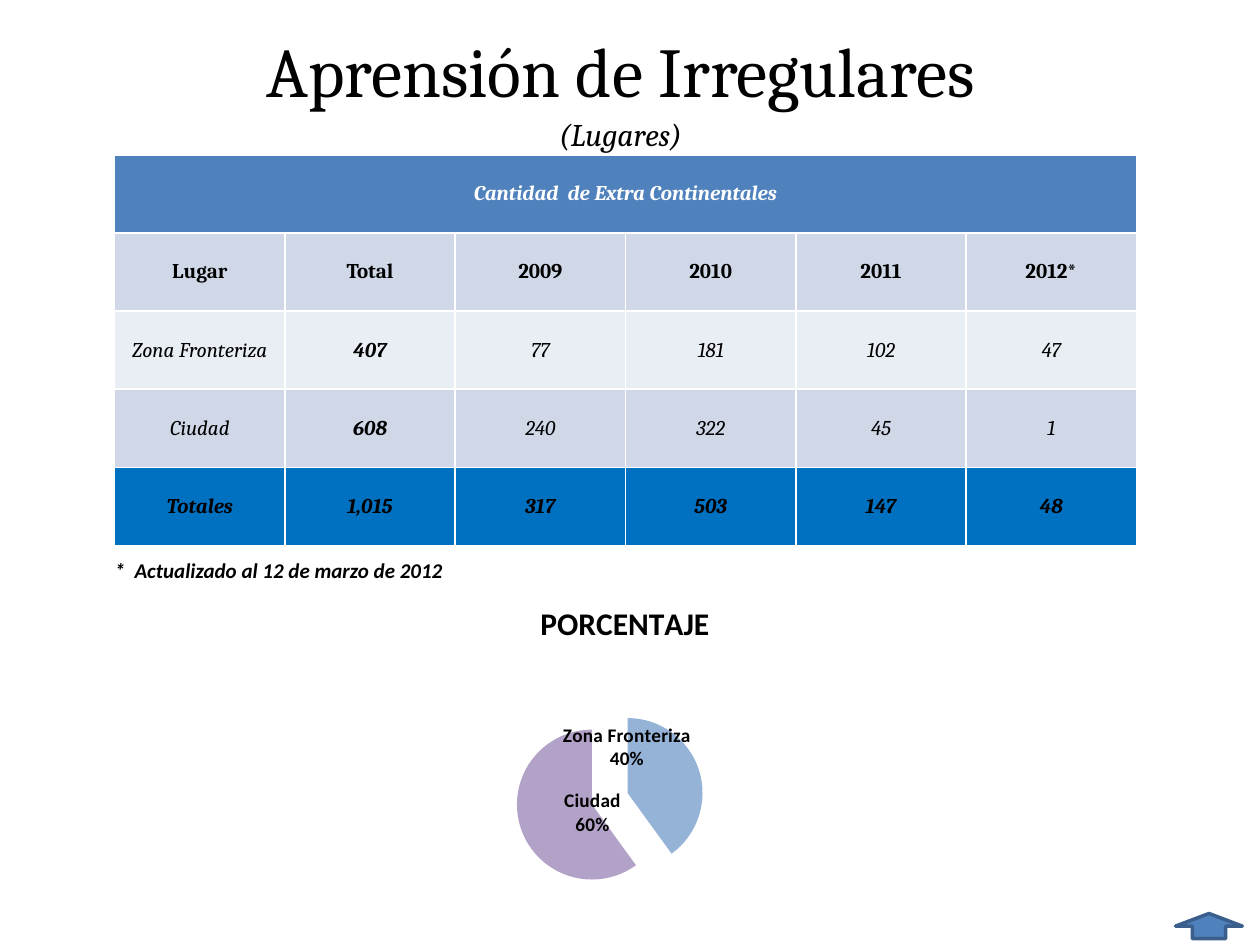
from dataclasses import dataclass

from lxml.etree import SubElement
from pptx import Presentation
from pptx.chart.data import CategoryChartData
from pptx.dml.color import RGBColor
from pptx.enum.chart import XL_CHART_TYPE, XL_LABEL_POSITION
from pptx.enum.shapes import MSO_SHAPE
from pptx.enum.text import MSO_ANCHOR, MSO_AUTO_SIZE, PP_ALIGN
from pptx.oxml import parse_xml
from pptx.oxml.ns import nsdecls, qn
from pptx.util import Inches, Pt


@dataclass(frozen=True)
class Theme:
    serif: str = "Cambria"
    sans: str = "Calibri"
    black: str = "000000"
    white: str = "FFFFFF"
    accent: str = "4F81BD"
    accent_dark: str = "3A5F8C"
    band_dark: str = "D0D8E8"
    band_light: str = "E9EDF4"
    totals: str = "0070C0"
    slices: tuple = ("95B3D7", "B3A2C7")
    title: int = 40
    subtitle: int = 18
    body: int = 12
    label: int = 11
    chart: int = 10


T = Theme()

ROWS = [
    ("Lugar", "Total", "2009", "2010", "2011", "2012*"),
    ("Zona Fronteriza", "407", "77", "181", "102", "47"),
    ("Ciudad", "608", "240", "322", "45", "1"),
    ("Totales", "1,015", "317", "503", "147", "48"),
]
ROW_FILLS = [T.band_dark, T.band_light, T.band_dark, T.totals]


def rgb(value):
    return RGBColor.from_string(value)


def style_font(font, size, name=T.serif, color=T.black, bold=False, italic=False):
    font.size, font.name = Pt(size), name
    font.bold, font.italic = bold, italic
    font.color.rgb = rgb(color)


def add_run(p, text, size, **style):
    r = p.add_run()
    r.text = text
    style_font(r.font, size, **style)


def add_title(s):
    title = s.shapes.title
    title.left, title.top = Inches(0.2), Inches(0.21)
    title.width, title.height = Inches(9.45), Inches(1.25)
    tf = title.text_frame
    tf.auto_size = MSO_AUTO_SIZE.NONE
    tf.vertical_anchor = MSO_ANCHOR.MIDDLE
    tf.margin_bottom = Inches(0.35)
    p = tf.paragraphs[0]
    p.alignment, p.line_spacing = PP_ALIGN.CENTER, 1.1
    add_run(p, "Aprensión de Irregulares", T.title)
    p.add_line_break()
    add_run(p, "(Lugares)", T.subtitle, italic=True)


def set_borders(cell, **widths):
    """Draw white borders; the sides are L, R, T and B, widths in points."""
    tc_pr = cell._tc.get_or_add_tcPr()
    for i, (side, width) in enumerate(widths.items()):
        ln = parse_xml(f'<a:ln{side} {nsdecls("a")} w="{Pt(width)}"><a:solidFill>'
                       f'<a:srgbClr val="{T.white}"/></a:solidFill></a:ln{side}>')
        tc_pr.insert(i, ln)


def format_cell(cell, fill=None, anchor=MSO_ANCHOR.MIDDLE):
    cell.margin_left = cell.margin_right = cell.margin_top = cell.margin_bottom = 0
    cell.vertical_anchor = anchor
    if fill:
        cell.fill.solid()
        cell.fill.fore_color.rgb = rgb(fill)
    else:
        cell.fill.background()


def write_cell(cell, text, align=PP_ALIGN.CENTER, **style):
    p = cell.text_frame.paragraphs[0]
    p.alignment = align
    add_run(p, text, T.body, **style)


def add_places_table(s):
    n_rows, n_cols = len(ROWS) + 2, len(ROWS[0])
    last = n_rows - 1
    frame = s.shapes.add_table(n_rows, n_cols, Inches(0.91), Inches(1.23),
                               Inches(8.11), Inches(3.41))
    table = frame.table
    table.first_row = table.horz_banding = False
    for row in table.rows:
        row.height = Inches(0.62)
    table.rows[last].height = Inches(0.31)

    # Fills and borders
    for r, fill in enumerate([T.accent, *ROW_FILLS, None]):
        for c in range(n_cols):
            cell = table.cell(r, c)
            format_cell(cell, fill, MSO_ANCHOR.MIDDLE if fill else MSO_ANCHOR.BOTTOM)
            set_borders(cell, L=1, R=1, T=1.5 if r == 1 else 1, B=1.5 if r == 0 else 1)

    # Heading over all columns
    table.cell(0, 0).merge(table.cell(0, n_cols - 1))
    write_cell(table.cell(0, 0), "Cantidad  de Extra Continentales",
               color=T.white, bold=True, italic=True)

    # Column names, places and totals
    for r, values in enumerate(ROWS, start=1):
        is_names, is_totals = r == 1, r == len(ROWS)
        for c, value in enumerate(values):
            write_cell(table.cell(r, c), value,
                       bold=is_names or is_totals or c == 1, italic=not is_names)

    # Footnote
    table.cell(last, 0).merge(table.cell(last, 1))
    write_cell(table.cell(last, 0), "*  Actualizado al 12 de marzo de 2012",
               PP_ALIGN.LEFT, name=T.sans, bold=True, italic=True)


def make_layout(**values):
    layout = parse_xml(f'<c:layout {nsdecls("c")}><c:manualLayout/></c:layout>')
    for tag, value in values.items():
        SubElement(layout[0], qn(f"c:{tag}")).set("val", str(value))
    return layout


def add_slice_label(point, series, index, dx, dy):
    label = point.data_label
    style_font(label.font, T.label, name=T.sans, bold=True)
    label.position = XL_LABEL_POSITION.CENTER
    d_lbl = series._element.xpath(f".//c:dLbl[c:idx/@val='{index}']")[0]
    d_lbl.find(qn("c:idx")).addnext(make_layout(x=dx, y=dy))
    # Keep each name whole instead of wrapping it to the slice
    d_lbl.find(qn("c:txPr")).find(qn("a:bodyPr")).set("wrap", "none")
    for tag, shown in (("showVal", 0), ("showCatName", 1), ("showPercent", 1)):
        d_lbl.find(qn(f"c:{tag}")).set("val", str(shown))
    SubElement(d_lbl, qn("c:separator")).text = "\n"


def add_share_pie(s):
    data = CategoryChartData()
    data.categories = ["Zona Fronteriza", "Ciudad"]
    data.add_series("Series 1", (40, 60))
    chart = s.shapes.add_chart(XL_CHART_TYPE.PIE, Inches(2.56), Inches(4.62),
                               Inches(4.8), Inches(2.71), data).chart
    style_font(chart.font, T.chart, name=T.sans)
    chart.has_legend = False
    chart.has_title = True
    add_run(chart.chart_title.text_frame.paragraphs[0], "PORCENTAJE",
            T.subtitle, name=T.sans, bold=True)

    # Plot position
    plot_area = chart._chartSpace.chart.plotArea
    for old in plot_area.findall(qn("c:layout")):
        plot_area.remove(old)
    plot_area.insert(0, make_layout(layoutTarget="inner", xMode="edge", yMode="edge",
                                    x=0.32, y=0.36, w=0.31, h=0.55))

    # Slices pulled apart, each with its label
    plot = chart.plots[0]
    plot.vary_by_categories = True
    series = plot.series[0]
    offsets = [(-0.06, -0.1), (0.06, -0.01)]
    for i, (color, (dx, dy)) in enumerate(zip(T.slices, offsets)):
        point = series.points[i]
        point.format.fill.solid()
        point.format.fill.fore_color.rgb = rgb(color)
        add_slice_label(point, series, i, dx, dy)
    explosion = parse_xml(f'<c:explosion {nsdecls("c")} val="25"/>')
    series._element.find(qn("c:dPt")).addprevious(explosion)


def add_up_arrow(s):
    sp = s.shapes.add_shape(MSO_SHAPE.DOWN_ARROW, Inches(9.33), Inches(7.25),
                            Inches(0.53), Inches(0.2))
    sp.rotation = 180
    sp.shadow.inherit = False
    sp.fill.solid()
    sp.fill.fore_color.rgb = rgb(T.accent)
    sp.line.color.rgb = rgb(T.accent_dark)
    sp.line.width = Pt(2)


def main():
    prs = Presentation()
    prs.slide_width, prs.slide_height = Inches(10), Inches(7.5)
    s = prs.slides.add_slide(prs.slide_layouts[5])
    add_title(s)
    add_up_arrow(s)
    add_places_table(s)
    add_share_pie(s)
    prs.save("out.pptx")


if __name__ == "__main__":
    main()
